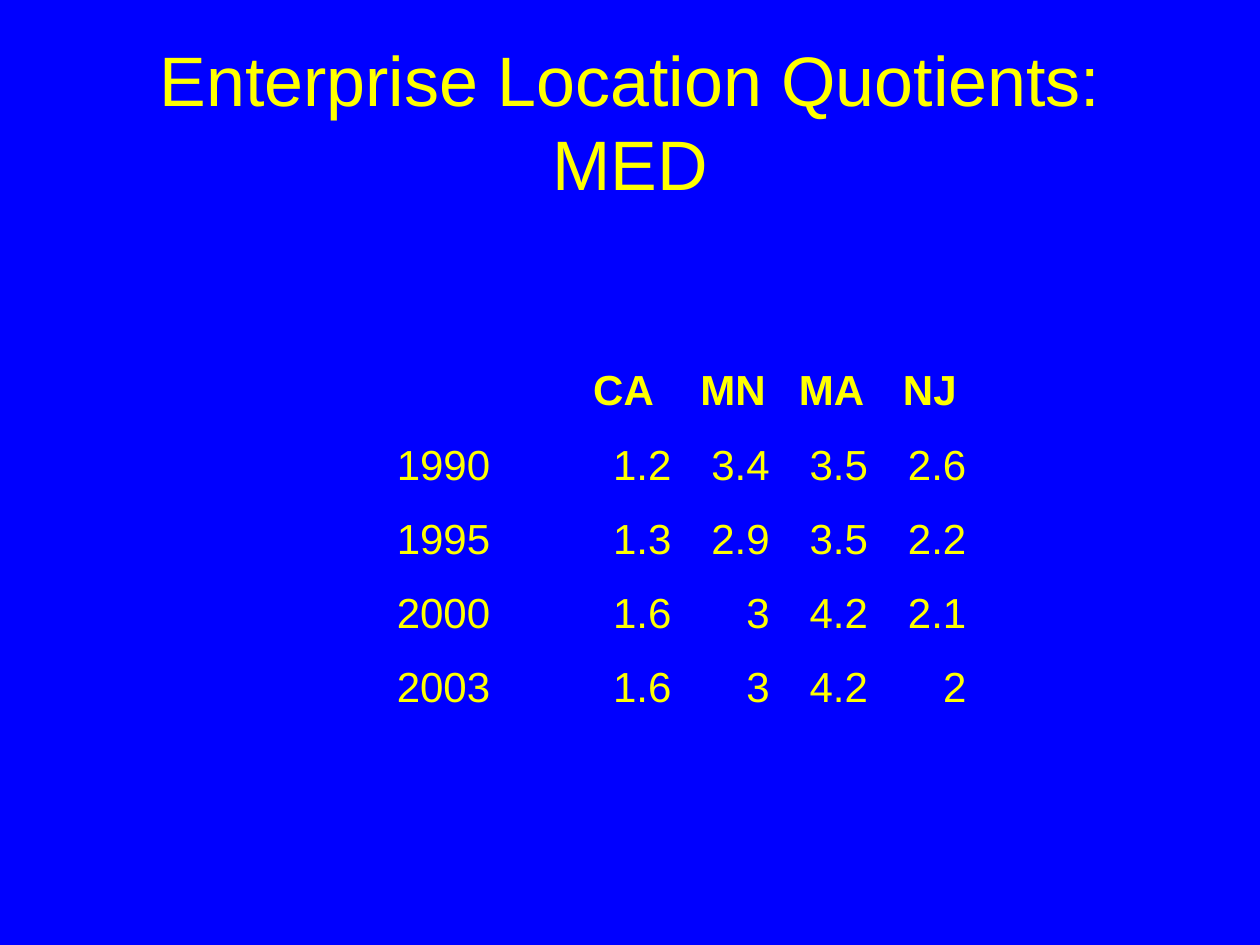
from pptx import Presentation
from pptx.dml.color import RGBColor
from pptx.enum.text import MSO_ANCHOR, PP_ALIGN
from pptx.util import Pt

MIDDLE, BOTTOM = MSO_ANCHOR.MIDDLE, MSO_ANCHOR.BOTTOM
CENTER, RIGHT = PP_ALIGN.CENTER, PP_ALIGN.RIGHT
BLUE, YELLOW = "0000FF", "FFFF00"
PLAIN = "{2D5ABB26-0587-4C30-8999-92F81FD0307C}"  # no style, no grid

STATES = ["CA", "MN", "MA", "NJ"]
QUOTES = {
    "1990": ["1.2", "3.4", "3.5", "2.6"],
    "1995": ["1.3", "2.9", "3.5", "2.2"],
    "2000": ["1.6", "3", "4.2", "2.1"],
    "2003": ["1.6", "3", "4.2", "2"],
}
WIDTHS = [125.3, 16.5, 16.5, 69.1, 56.2, 56.2, 56.2]
HEIGHTS = [48.2] + [42.4] * 5


def color(code):
    return RGBColor.from_string(code)


def write(frame, text, size, align, bold=False):
    para = frame.paragraphs[0]
    para.text = text
    para.alignment = align
    font = para.runs[0].font
    font.name, font.size, font.bold = "Arial", Pt(size), bold
    font.color.rgb = color(YELLOW)
    return para


def add_title(slide, left, top, width, height):
    box = slide.shapes.add_textbox(Pt(left), Pt(top), Pt(width), Pt(height))
    frame = box.text_frame
    frame.word_wrap = True
    frame.vertical_anchor = MIDDLE
    write(frame, "Enterprise Location Quotients: MED", 40, CENTER)


def add_quotes(slide, left, top):
    frame = slide.shapes.add_table(
        len(HEIGHTS), len(WIDTHS), Pt(left), Pt(top),
        Pt(sum(WIDTHS)), Pt(sum(HEIGHTS)))
    table = frame.table
    table.first_row = table.horz_banding = False
    table._tbl.tblPr[0].text = PLAIN
    for col, width in zip(table.columns, WIDTHS):
        col.width = Pt(width)
    for row, height in zip(table.rows, HEIGHTS):
        row.height = Pt(height)
    for cell in table.iter_cells():
        cell.fill.background()
        cell.vertical_anchor = BOTTOM
    table.cell(0, 0).merge(table.cell(0, 3))

    # State heads, then one row for each year
    for c, state in enumerate(STATES, 3):
        write(table.cell(1, c).text_frame, state, 24, CENTER, True)
    for r, (year, values) in enumerate(QUOTES.items(), 2):
        write(table.cell(r, 0).text_frame, year, 24, RIGHT)
        for c, value in enumerate(values, 3):
            write(table.cell(r, c).text_frame, value, 24, RIGHT)


def main():
    deck = Presentation()
    deck.slide_width, deck.slide_height = Pt(720), Pt(540)
    slide = deck.slides.add_slide(deck.slide_layouts[6])
    fill = slide.background.fill
    fill.solid()
    fill.fore_color.rgb = color(BLUE)
    add_title(slide, 36, 24, 648, 90)
    add_quotes(slide, 162, 150)
    deck.save("out.pptx")


if __name__ == "__main__":
    main()
